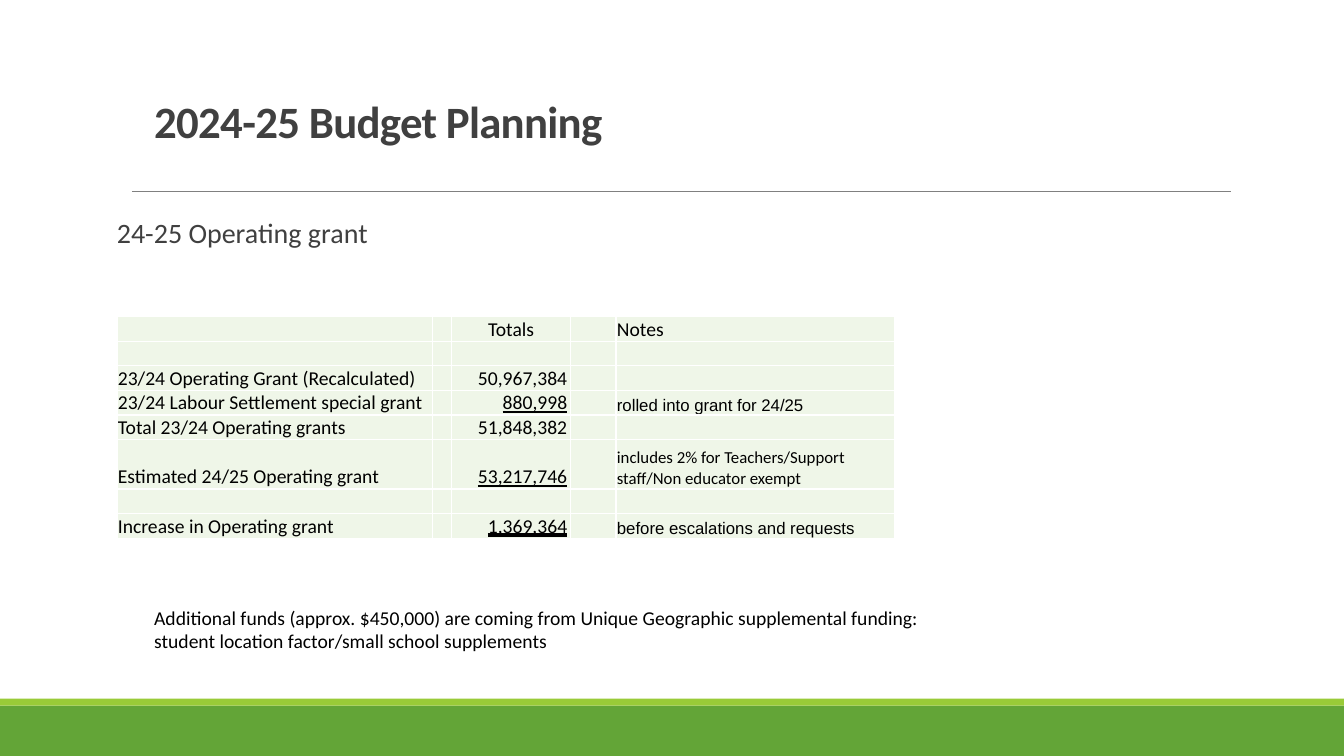
from lxml.etree import SubElement
from pptx import Presentation
from pptx.dml.color import RGBColor
from pptx.enum.shapes import MSO_CONNECTOR, MSO_SHAPE
from pptx.enum.text import MSO_ANCHOR, MSO_AUTO_SIZE, MSO_UNDERLINE, PP_ALIGN
from pptx.oxml.ns import qn
from pptx.util import Pt


def color(value):
    return RGBColor.from_string(value)


def write(frame, text, size=14, font="Calibri", ink="000000", bold=False,
          underline=None, align=PP_ALIGN.LEFT, anchor=MSO_ANCHOR.TOP,
          leading=1.0, spacing=0):
    frame.word_wrap = True
    frame.vertical_anchor = anchor
    para = frame.paragraphs[0]
    para.alignment = align
    para.line_spacing = leading
    span = para.add_run()
    span.text = text
    span.font.size = Pt(size)
    span.font.name = font
    span.font.bold = bold
    span.font.underline = underline
    span.font.color.rgb = color(ink)
    if spacing:
        span.font._element.set("spc", str(spacing))
    return para


deck = Presentation()
deck.slide_width, deck.slide_height = Pt(960), Pt(540)
page = deck.slides.add_slide(deck.slide_layouts[6])

for top, height, fill in [(504, 36, "63A537"), (499, 5, "99CB38")]:
    band = page.shapes.add_shape(MSO_SHAPE.RECTANGLE, 0, Pt(top), Pt(960), Pt(height))
    band.shadow.inherit = False
    band.fill.solid()
    band.fill.fore_color.rgb = color(fill)
    band.line.fill.background()

rule = page.shapes.add_connector(MSO_CONNECTOR.STRAIGHT, Pt(94.3), Pt(136.8), Pt(879), Pt(136.8))
rule.line.color.rgb = color("808080")
rule.line.width = Pt(0.5)
SubElement(rule._element.spPr, qn("a:effectLst"))

title = page.shapes.add_textbox(Pt(103), Pt(49.7), Pt(548.6), Pt(59))
write(title.text_frame, "2024-25 Budget Planning", size=32, ink="404040", bold=True,
      anchor=MSO_ANCHOR.BOTTOM, leading=0.85, spacing=-50)

body = page.shapes.add_textbox(Pt(83.5), Pt(153.4), Pt(768.2), Pt(316.8))
body.text_frame.margin_left = body.text_frame.margin_right = 0
heading = write(body.text_frame, "24-25 Operating grant", size=20, ink="404040", leading=0.9)
heading.space_before, heading.space_after = Pt(12), Pt(2)

single, heavy = MSO_UNDERLINE.SINGLE_LINE, MSO_UNDERLINE.HEAVY_LINE
arial_note = {"size": 12, "font": "Arial"}
grant_rows = [
    ("", "Totals", {"align": PP_ALIGN.CENTER}, "Notes", {}),
    ("", "", {}, "", {}),
    ("23/24 Operating Grant (Recalculated)", "50,967,384", {}, "", {}),
    ("23/24 Labour Settlement special grant", "880,998", {"underline": single},
     "rolled into grant for 24/25", arial_note),
    ("Total 23/24 Operating grants", "51,848,382", {}, "", {}),
    ("Estimated 24/25 Operating grant", "53,217,746", {"underline": single},
     "includes 2% for Teachers/Support staff/Non educator exempt", {"size": 12}),
    ("", "", {}, "", {}),
    ("Increase in Operating grant", "1,369,364", {"underline": heavy},
     "before escalations and requests", arial_note),
]
column_widths = [225.4, 13.7, 85, 32.4, 199.4]
row_heights = [17.6] * 5 + [35.3] + [17.6] * 2

grid = page.shapes.add_table(len(grant_rows), len(column_widths), Pt(83.5), Pt(226.1),
                             Pt(sum(column_widths)), Pt(sum(row_heights))).table
grid.first_row = grid.horz_banding = False
for column, width in zip(grid.columns, column_widths):
    column.width = Pt(width)
for row, height in zip(grid.rows, row_heights):
    row.height = Pt(height)

for row, (label, total, total_style, note, note_style) in zip(grid.rows, grant_rows):
    entries = [(label, {}), ("", {}), (total, total_style), ("", {}), (note, note_style)]
    for cell, (text, style) in zip(row.cells, entries):
        cell.margin_left = cell.margin_right = cell.margin_top = Pt(0.7)
        cell.margin_bottom = 0
        cell.vertical_anchor = MSO_ANCHOR.BOTTOM
        properties = cell._tc.get_or_add_tcPr()
        for side in ("lnL", "lnR", "lnT", "lnB"):
            border = SubElement(properties, qn("a:" + side), w=str(Pt(1)))
            paint = SubElement(border, qn("a:solidFill"))
            SubElement(paint, qn("a:srgbClr"), val="FFFFFF")
        cell.fill.solid()
        cell.fill.fore_color.rgb = color("EFF6E8")
        if not text:
            SubElement(cell.text_frame.paragraphs[0]._p, qn("a:endParaRPr"), sz="1400")
            continue
        is_amount = text[0].isdigit() and text == total
        para = write(cell.text_frame, "\t" + text if is_amount else text,
                     anchor=MSO_ANCHOR.BOTTOM, **style)
        if is_amount:
            stops = SubElement(para._p.get_or_add_pPr(), qn("a:tabLst"))
            SubElement(stops, qn("a:tab"), pos=str(Pt(82)), algn="r")

footnote = page.shapes.add_textbox(Pt(103), Pt(429.1), Pt(584.6), Pt(41))
write(footnote.text_frame, "Additional funds (approx. $450,000) are coming from Unique Geographic "
      "supplemental funding: student location factor/small school supplements")
footnote.text_frame.auto_size = MSO_AUTO_SIZE.SHAPE_TO_FIT_TEXT

deck.save("out.pptx")
